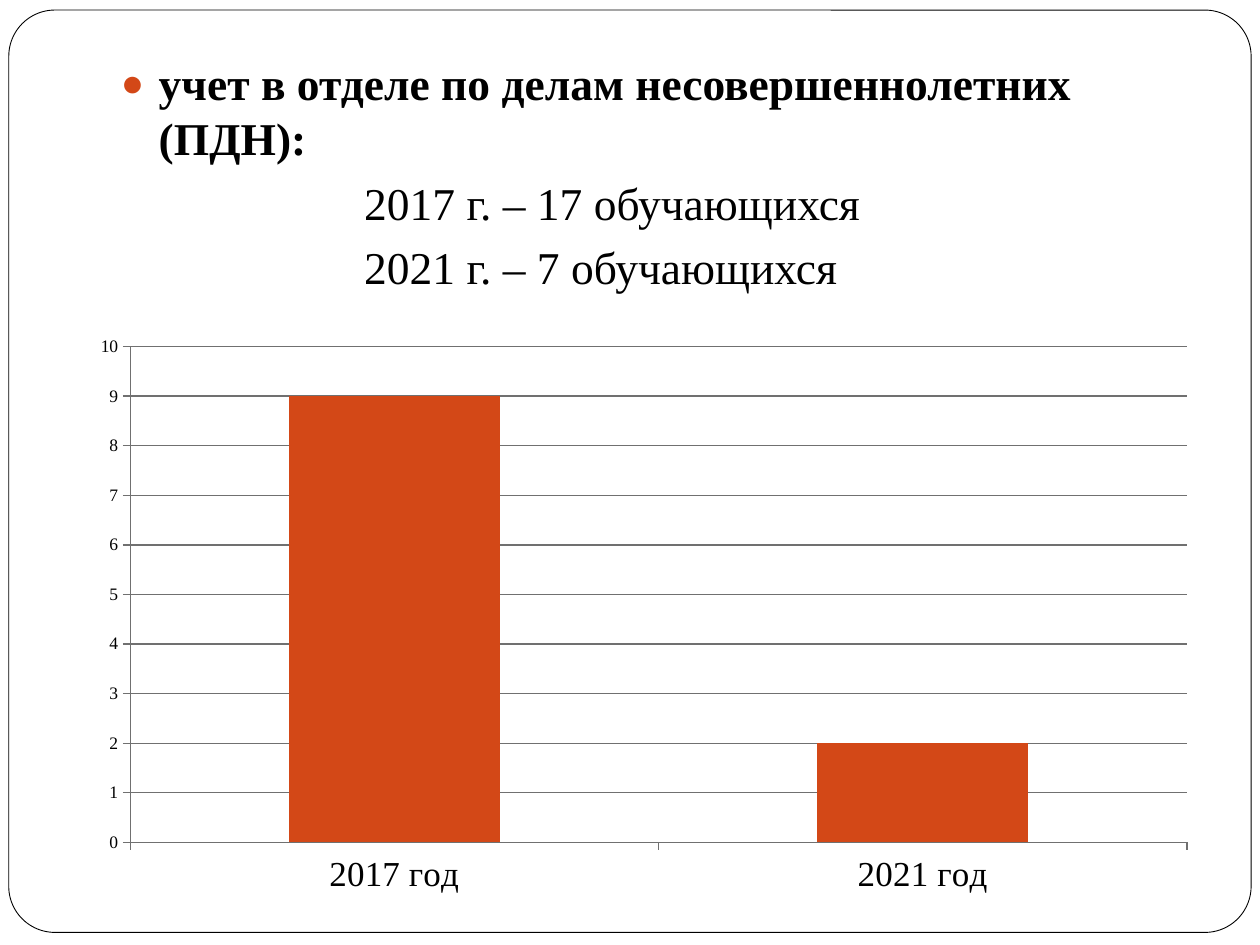
from dataclasses import dataclass

import pptx
import pptx.chart.data
import pptx.dml.color
import pptx.enum.chart
import pptx.enum.shapes
import pptx.enum.text
import pptx.oxml
import pptx.oxml.ns
import pptx.util
from pptx.util import Inches, Pt

FONT = "Times New Roman"
BLACK, WHITE, ORANGE, GRAY = "000000", "FFFFFF", "D34817", "707070"


@dataclass
class Line:
    text: str
    left: float
    heading: bool = False


LINES = [
    Line("учет в отделе по делам несовершеннолетних (ПДН):", 0.3, heading=True),
    Line("2017 г. – 17 обучающихся", 1.93),
    Line("2021 г. – 7 обучающихся", 1.93),
]


def color(value: str) -> pptx.dml.color.RGBColor:
    return pptx.dml.color.RGBColor.from_string(value)


def format_font(font, size: float, bold: bool = False) -> None:
    font.name = FONT
    font.size = Pt(size)
    font.bold = bold
    font.color.rgb = color(BLACK)


def place(shape, left: float, top: float, width: float, height: float) -> None:
    shape.left, shape.top = Inches(left), Inches(top)
    shape.width, shape.height = Inches(width), Inches(height)


def add_frame(slide) -> None:
    frame = slide.shapes.add_shape(
        pptx.enum.shapes.MSO_SHAPE.ROUNDED_RECTANGLE,
        Inches(0.07), Inches(0.08), Inches(9.86), Inches(7.32))
    frame.adjustments[0] = 0.05
    frame.shadow.inherit = False
    frame.fill.solid()
    frame.fill.fore_color.rgb = color(WHITE)
    frame.line.color.rgb = color(BLACK)
    frame.line.width = Pt(0.5)
    # Behind the placeholders
    slide.shapes._spTree.insert(2, frame._element)


def set_bullet(paragraph, line: Line) -> None:
    properties = paragraph._p.get_or_add_pPr()
    properties.set("marL", str(Inches(line.left)))
    properties.set("indent", str(Inches(-0.3 if line.heading else 0)))
    namespace = pptx.oxml.ns.nsdecls("a")
    if line.heading:
        parts = [
            f'<a:buClr {namespace}><a:srgbClr val="{ORANGE}"/></a:buClr>',
            f'<a:buSzPct {namespace} val="85000"/>',
            f'<a:buChar {namespace} char="●"/>',
        ]
    else:
        parts = [f"<a:buNone {namespace}/>"]
    for part in parts:
        properties.append(pptx.oxml.parse_xml(part))


def fill_body(body, lines: list[Line]) -> None:
    place(body, 0.86, 0.39, 8.5, 2.11)
    text_frame = body.text_frame
    text_frame.auto_size = pptx.enum.text.MSO_AUTO_SIZE.NONE
    text_frame.text = "\n".join(line.text for line in lines)
    for paragraph, line in zip(text_frame.paragraphs, lines):
        paragraph.space_before = Pt(5.8)
        set_bullet(paragraph, line)
        format_font(paragraph.runs[0].font, 26, bold=line.heading)


def format_axis(axis, size: float) -> None:
    axis.major_tick_mark = pptx.enum.chart.XL_TICK_MARK.OUTSIDE
    axis.minor_tick_mark = pptx.enum.chart.XL_TICK_MARK.NONE
    axis.format.line.color.rgb = color(GRAY)
    format_font(axis.tick_labels.font, size)


def add_column_chart(slide) -> None:
    data = pptx.chart.data.CategoryChartData()
    data.categories = ["2017 год", "2021 год"]
    data.add_series("Series 1", [9, 2])
    chart = slide.shapes.add_chart(
        pptx.enum.chart.XL_CHART_TYPE.COLUMN_STACKED,
        Inches(0.62), Inches(2.58), Inches(8.98), Inches(4.61), data).chart
    chart.has_legend = False
    chart.has_title = False
    format_font(chart.font, 10)

    plot = chart.plots[0]
    plot.gap_width = 150
    plot.overlap = 100
    plot.vary_by_categories = False
    column_fill = plot.series[0].format.fill
    column_fill.solid()
    column_fill.fore_color.rgb = color(ORANGE)

    format_axis(chart.category_axis, 20)
    value_axis = chart.value_axis
    format_axis(value_axis, 10)
    value_axis.minimum_scale, value_axis.maximum_scale = 0, 10
    value_axis.major_unit = 1
    value_axis.has_major_gridlines = True
    value_axis.major_gridlines.format.line.color.rgb = color(GRAY)


def main() -> None:
    presentation = pptx.Presentation()
    presentation.slide_width, presentation.slide_height = Inches(10), Inches(7.5)
    slide = presentation.slides.add_slide(presentation.slide_layouts[1])
    title = slide.shapes.title._element
    title.getparent().remove(title)
    add_frame(slide)
    fill_body(slide.placeholders[1], LINES)
    add_column_chart(slide)
    presentation.save("out.pptx")


if __name__ == "__main__":
    main()
